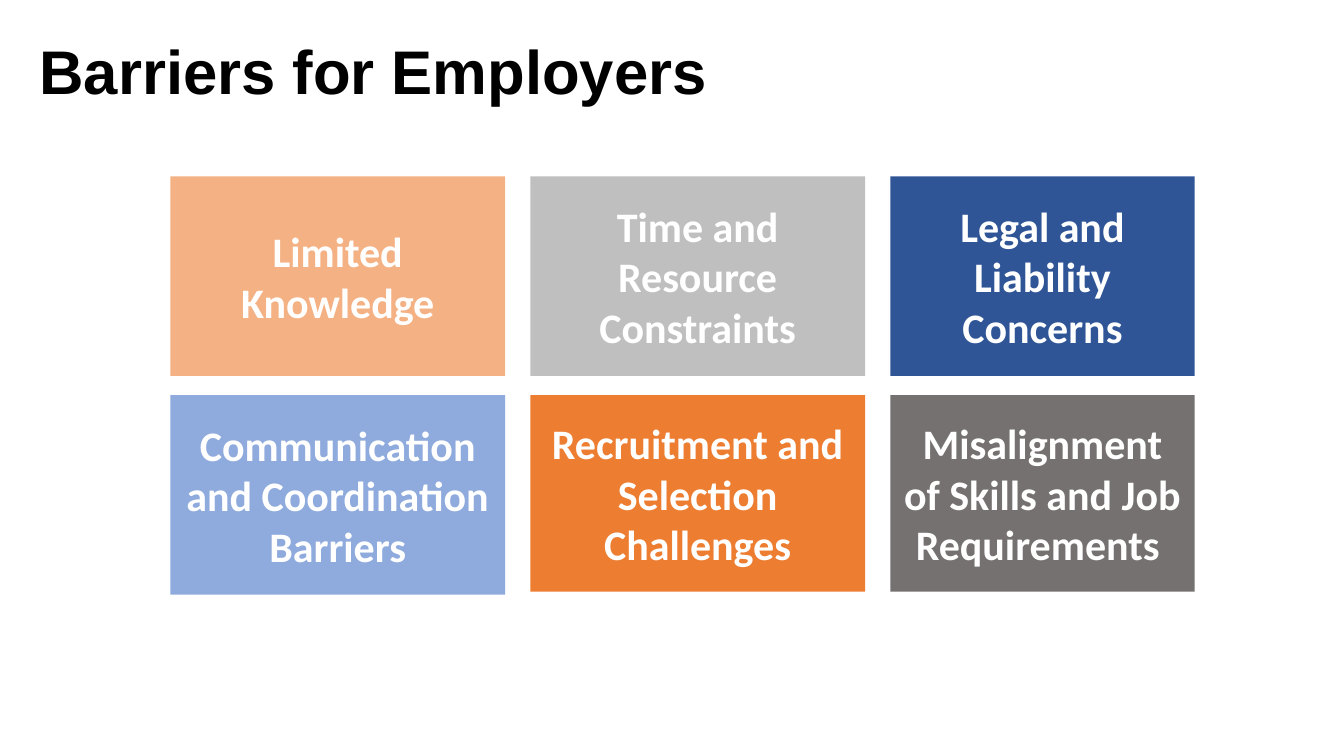
import pptx
import pptx.util
import pptx.dml.color
import pptx.enum.shapes
import pptx.enum.text
from dataclasses import dataclass

Inches = pptx.util.Inches
Pt = pptx.util.Pt
RGBColor = pptx.dml.color.RGBColor
PP_ALIGN = pptx.enum.text.PP_ALIGN
MSO_ANCHOR = pptx.enum.text.MSO_ANCHOR

HEADING = "Barriers for Employers"
BARRIERS = [
    [
        ("Limited Knowledge", "F4B183", 1.98),
        ("Time and Resource Constraints", "BFBFBF", 1.98),
        ("Legal and Liability Concerns", "2F5597", 1.98),
    ],
    [
        ("Communication and Coordination Barriers", "8FAADC", 1.98),
        ("Recruitment and Selection Challenges", "ED7D31", 1.95),
        ("Misalignment of Skills and Job Requirements ", "767171", 1.95),
    ],
]
COLUMN_WIDTHS = [3.32, 3.32, 3.02]
GRID_LEFT, GRID_TOP = 1.69, 1.75
COLUMN_GAP, ROW_STEP = 0.25, 2.17


@dataclass(frozen=True)
class Theme:
    heading_font: str = "Arial"
    heading_size: int = 44
    heading_color: str = "000000"
    barrier_font: str = "Calibri"
    barrier_size: int = 30
    barrier_color: str = "FFFFFF"


THEME = Theme()


def write(frame, text, font_name, size, color, align, anchor):
    frame.text = text
    frame.word_wrap = True
    frame.auto_size = pptx.enum.text.MSO_AUTO_SIZE.NONE
    frame.vertical_anchor = anchor
    paragraph = frame.paragraphs[0]
    paragraph.alignment = align
    for run in paragraph.runs:
        run.font.name = font_name
        run.font.size = Pt(size)
        run.font.bold = True
        run.font.color.rgb = RGBColor.from_string(color)


def add_heading(slide):
    heading = slide.shapes.title
    heading.left, heading.top = Inches(0.29), Inches(0.36)
    heading.width, heading.height = Inches(12.51), Inches(1.11)
    write(heading.text_frame, HEADING, THEME.heading_font, THEME.heading_size,
          THEME.heading_color, PP_ALIGN.LEFT, MSO_ANCHOR.TOP)
    heading.text_frame.paragraphs[0].line_spacing = 0.9


def add_barrier(slide, left, top, width, height, label, fill):
    barrier = slide.shapes.add_shape(
        pptx.enum.shapes.MSO_SHAPE.RECTANGLE,
        Inches(left), Inches(top), Inches(width), Inches(height))
    barrier.shadow.inherit = False
    barrier.fill.solid()
    barrier.fill.fore_color.rgb = RGBColor.from_string(fill)
    barrier.line.fill.background()
    write(barrier.text_frame, label, THEME.barrier_font, THEME.barrier_size,
          THEME.barrier_color, PP_ALIGN.CENTER, MSO_ANCHOR.MIDDLE)


def main():
    deck = pptx.Presentation()
    deck.slide_width, deck.slide_height = Inches(13.33), Inches(7.5)
    slide = deck.slides.add_slide(deck.slide_layouts[5])
    add_heading(slide)
    for row, barriers in enumerate(BARRIERS):
        left = GRID_LEFT
        for width, (label, fill, height) in zip(COLUMN_WIDTHS, barriers):
            add_barrier(slide, left, GRID_TOP + row * ROW_STEP, width, height, label, fill)
            left += width + COLUMN_GAP
    deck.save("out.pptx")


if __name__ == "__main__":
    main()
